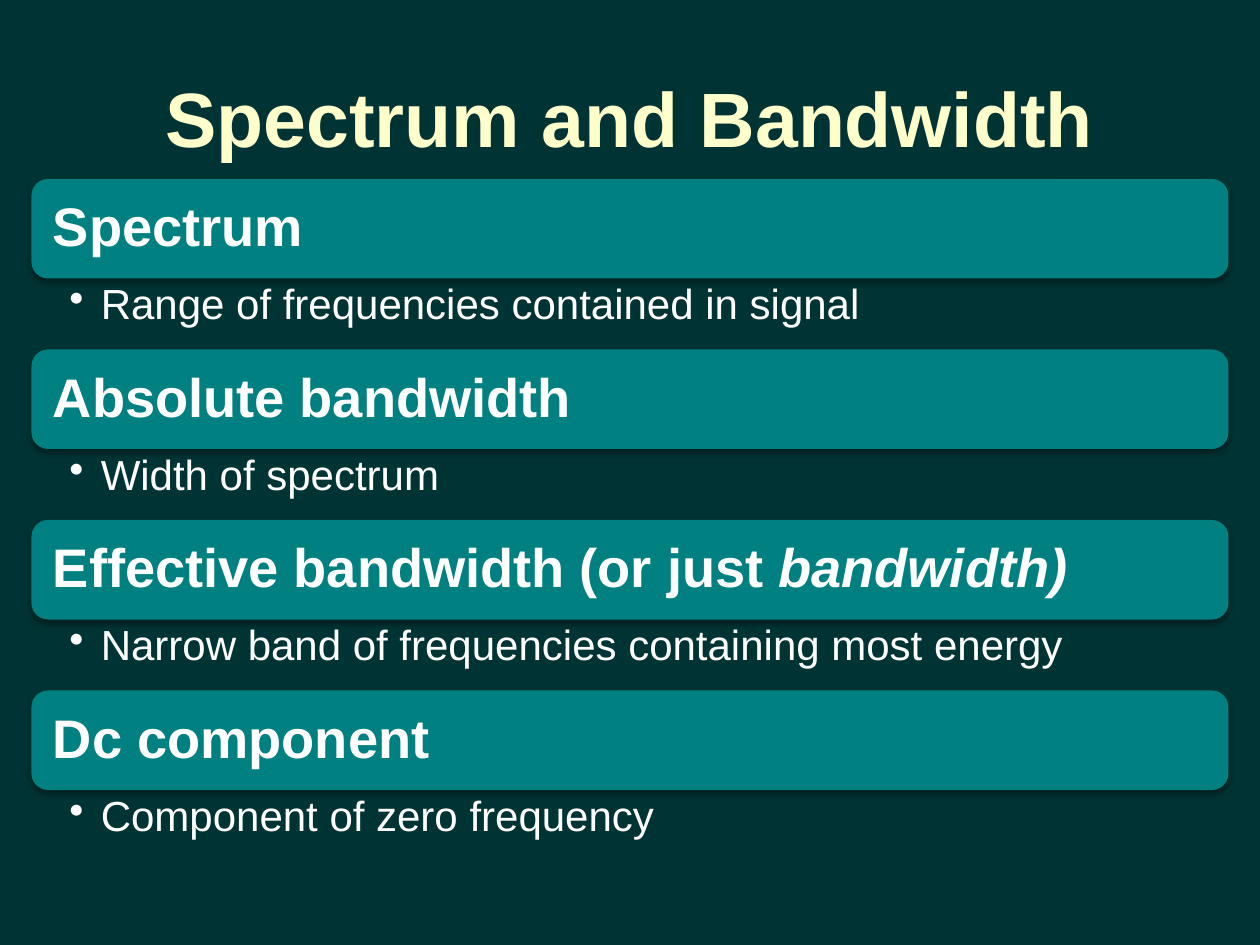
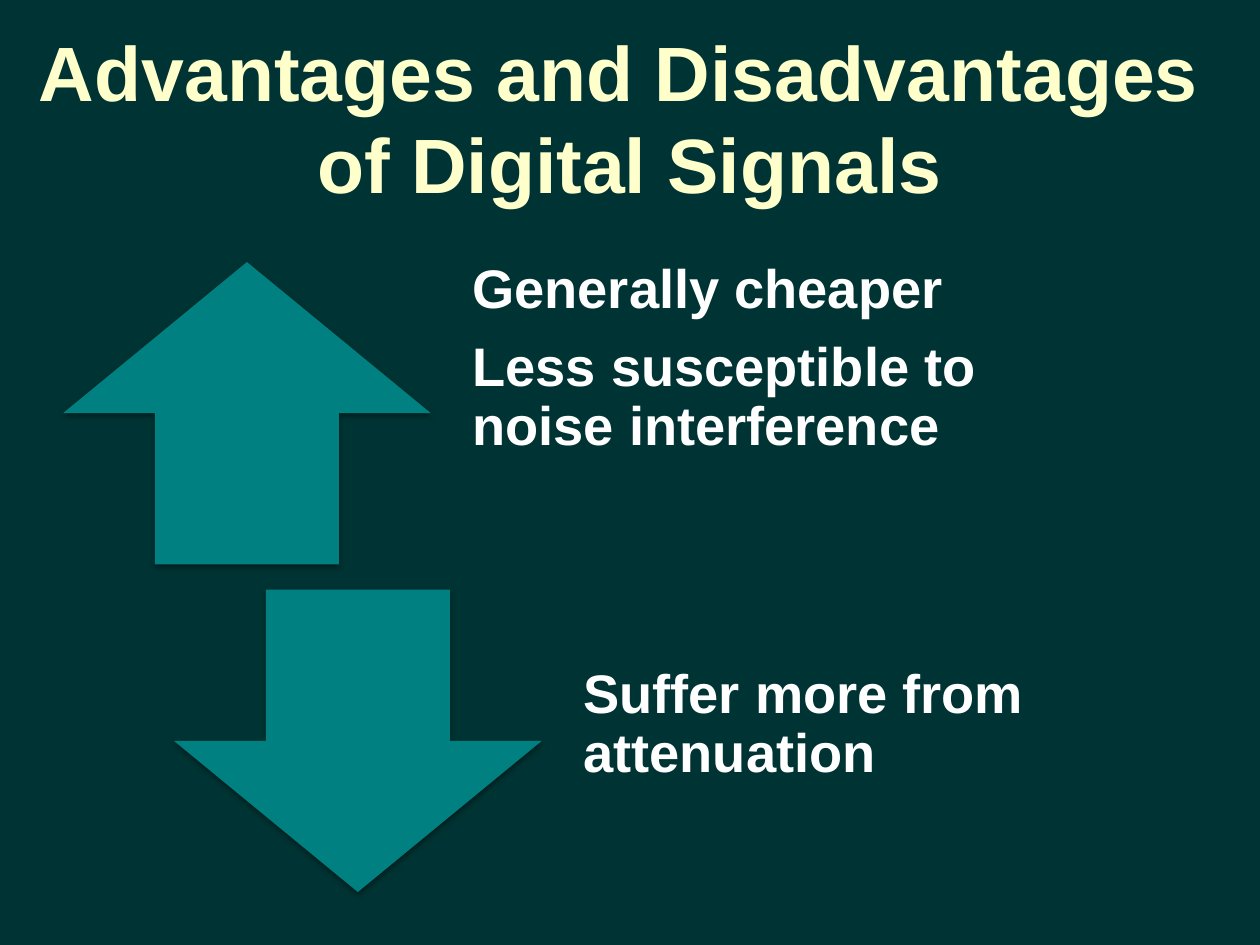
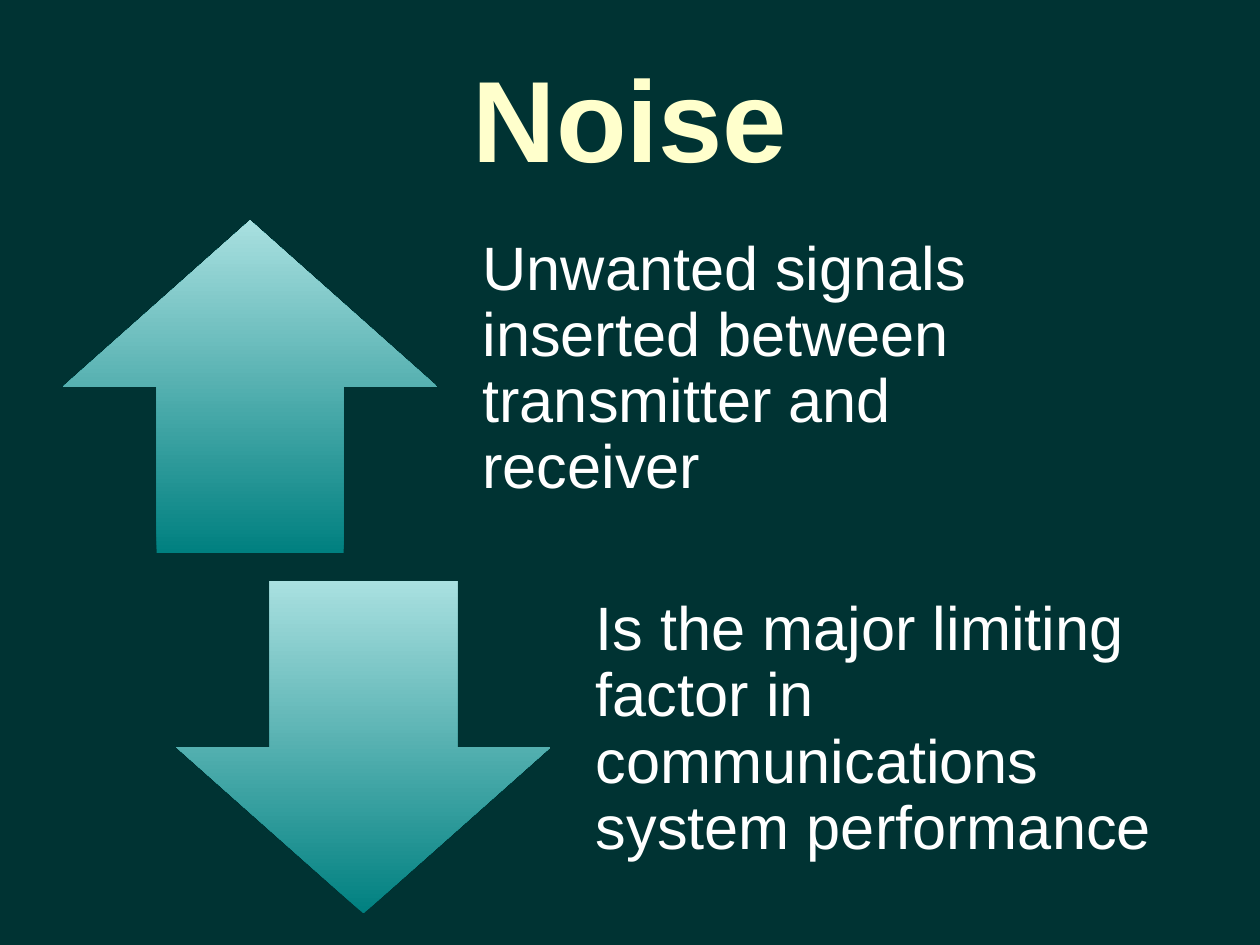
"""Three slides on signals: spectrum and bandwidth, digital signals, noise."""
from lxml.etree import SubElement
from pptx import Presentation
from pptx.dml.color import RGBColor
from pptx.enum.shapes import MSO_SHAPE as SHAPE
from pptx.enum.text import MSO_ANCHOR as ANCHOR, PP_ALIGN as ALIGN
from pptx.oxml.ns import qn
from pptx.util import Inches, Pt

DARK = RGBColor(0x00, 0x33, 0x33)
CREAM = RGBColor(0xFF, 0xFF, 0xCC)
TEAL = RGBColor(0x00, 0x80, 0x80)
PALE = RGBColor(0xA9, 0xE0, 0xE0)
WHITE = RGBColor(0xFF, 0xFF, 0xFF)
FONT = "Arial"


def add_text(s, box, paras, size, color=WHITE, bold=False, align=ALIGN.LEFT,
             anchor=ANCHOR.MIDDLE, insets=(0.1, 0.05, 0.1, 0.05),
             spacing=0.9, after=0.35, bullet=False):
    """Add a text box; each paragraph is a list of (text, italic) runs."""
    tf = s.shapes.add_textbox(*[Inches(v) for v in box]).text_frame
    tf.word_wrap = True
    tf.vertical_anchor = anchor
    tf.margin_left, tf.margin_top, tf.margin_right, tf.margin_bottom = [
        Inches(v) for v in insets]
    for i, runs in enumerate(paras):
        p = tf.paragraphs[0] if i == 0 else tf.add_paragraph()
        p.alignment = align
        p.line_spacing = spacing
        p.space_after = Pt(round(size * after))
        if bullet:
            pPr = p._p.get_or_add_pPr()
            pPr.set("marL", str(Inches(0.25)))
            pPr.set("indent", str(-Inches(0.25)))
            SubElement(pPr, qn("a:buChar"), char="•")
        for text, italic in runs:
            for j, line in enumerate(text.split("\n")):
                if j:
                    p.add_line_break()
                r = p.add_run()
                r.text = line
                r.font.name = FONT
                r.font.size = Pt(size)
                r.font.bold = bold
                r.font.italic = italic
                r.font.color.rgb = color


def add_block(s, kind, box, shadow=None, gradient=False):
    """Add a borderless teal shape; shadow is (opacity percent, distance)."""
    sp = s.shapes.add_shape(kind, *[Inches(v) for v in box])
    sp.shadow.inherit = False
    sp.line.fill.background()
    if gradient:
        sp.fill.gradient()
        sp.fill.gradient_angle = 90
        for stop, color in zip(sp.fill.gradient_stops, (TEAL, PALE)):
            stop.color.rgb = color
    else:
        sp.fill.solid()
        sp.fill.fore_color.rgb = TEAL
    if shadow:
        opacity, dist = shadow
        effects = sp._element.spPr.find(qn("a:effectLst"))
        outer = SubElement(effects, qn("a:outerShdw"), blurRad=str(Pt(3.1)),
                           dist=str(Pt(dist)), dir="5400000", rotWithShape="0")
        black = SubElement(outer, qn("a:srgbClr"), val="000000")
        SubElement(black, qn("a:alpha"), val=str(opacity * 1000))


prs = Presentation()
prs.slide_width, prs.slide_height = Inches(10), Inches(7.5)

slides = []
for title, size, left in [
    ("Spectrum and Bandwidth", 44, 0.5),
    ("Advantages and Disadvantages \nof Digital Signals", 44, 0),
    ("Noise", 66, 0.5),
]:
    s = prs.slides.add_slide(prs.slide_layouts[6])
    s.background.fill.solid()
    s.background.fill.fore_color.rgb = DARK
    add_text(s, (left, 0.3, 10 - 2 * left, 1.25), [[(title, False)]], size,
             color=CREAM, bold=True, align=ALIGN.CENTER, spacing=1.0, after=0)
    slides.append(s)
spectrum, digital, noise = slides

terms = [
    ([("Spectrum", False)], "Range of frequencies contained in signal"),
    ([("Absolute bandwidth", False)], "Width of spectrum"),
    ([("Effective bandwidth (or just ", False), ("bandwidth)", True)],
     "Narrow band of frequencies containing most energy"),
    ([("Dc component", False)], "Component of zero frequency"),
]
band_h, detail_h = 0.79, 0.56
pitch = 4.06 / 3
for i, (term, detail) in enumerate(terms):
    top = 1.42 + i * pitch
    add_block(spectrum, SHAPE.ROUNDED_RECTANGLE, (0.25, top, 9.5, band_h),
              shadow=(35, 1.8))
    add_text(spectrum, (0.29, top + 0.04, 9.42, 0.72), [term], 31, bold=True,
             insets=(0.13, 0.13, 0.13, 0.13))
    add_text(spectrum, (0.25, top + band_h, 9.5, detail_h), [[(detail, False)]],
             24, anchor=ANCHOR.TOP, insets=(0.3, 0.04, 0.24, 0.04), after=0.2,
             bullet=True)

arrows = [
    (SHAPE.UP_ARROW, 0.5, 2.08, 0.85,
     ["Generally cheaper", "Less susceptible to noise interference"]),
    (SHAPE.DOWN_ARROW, 1.38, 4.68, 0.24, ["Suffer more from attenuation"]),
]
for kind, left, top, bottom_inset, points in arrows:
    add_block(digital, kind, (left, top, 2.92, 2.4), shadow=(38, 1.6))
    add_text(digital, (left + 3.01, top, 4.95, 2.4),
             [[(point, False)] for point in points], 31, bold=True,
             insets=(0.24, 0, 0.24, bottom_inset))

arrows = [
    (SHAPE.UP_ARROW, 0.5, 1.75,
     "Unwanted signals inserted between transmitter and receiver"),
    (SHAPE.DOWN_ARROW, 1.4, 4.61,
     "Is the major limiting factor in communications system performance"),
]
for kind, left, top, point in arrows:
    add_block(noise, kind, (left, top, 2.97, 2.64), gradient=True)
    add_text(noise, (left + 3.06, top, 5.04, 2.64), [[(point, False)]], 35,
             insets=(0.27, 0, 0.27, 0.27))

prs.save("out.pptx")
